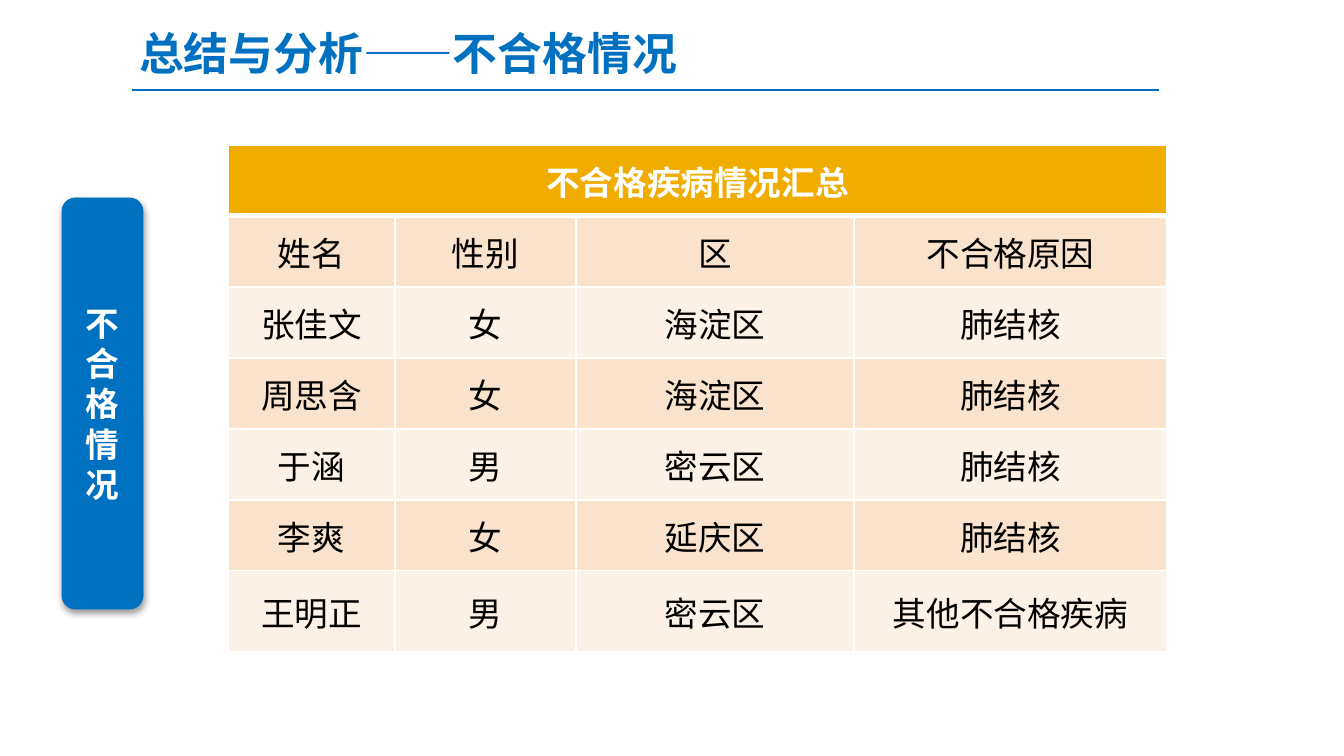
from lxml.etree import SubElement
from pptx import Presentation
from pptx.dml.color import RGBColor
from pptx.enum.shapes import MSO_CONNECTOR, MSO_SHAPE
from pptx.enum.text import MSO_ANCHOR, MSO_AUTO_SIZE, PP_ALIGN
from pptx.oxml import parse_xml
from pptx.oxml.ns import nsdecls, qn
from pptx.util import Pt

PX = 914400 / 134.4
FONT = "Noto Sans CJK SC"
BLUE = RGBColor(0x00, 0x70, 0xC0)
GOLD = RGBColor(0xF0, 0xAD, 0x00)
PEACH = RGBColor(0xF9, 0xE3, 0xCC)
CREAM = RGBColor(0xFC, 0xF1, 0xE7)
WHITE = RGBColor(0xFF, 0xFF, 0xFF)
BLACK = RGBColor(0x00, 0x00, 0x00)


def px(*nums):
    return [round(n * PX) for n in nums]


def write(para, text, size, color, bold):
    run = para.add_run()
    run.text = text
    font = run.font
    font.size, font.bold, font.name = Pt(size), bold, FONT
    font.color.rgb = color
    SubElement(run._r.get_or_add_rPr(), qn("a:ea"), typeface=FONT)


deck = Presentation()
deck.slide_width, deck.slide_height = px(1344, 756)
slide = deck.slides.add_slide(deck.slide_layouts[6])
shapes = slide.shapes

# Rule under the title
rule = shapes.add_connector(MSO_CONNECTOR.STRAIGHT, *px(132, 90, 1159, 90))
rule.line.color.rgb = BLUE
rule.line.width = Pt(1.25)
SubElement(rule._element.spPr, qn("a:effectLst"))

# Title
title = shapes.add_textbox(*px(126, 8, 577, 79))
frame = title.text_frame
frame.word_wrap = False
frame.auto_size = MSO_AUTO_SIZE.SHAPE_TO_FIT_TEXT
para = frame.paragraphs[0]
para.line_spacing = 1.2
write(para, "总结与分析——不合格情况", 24, BLUE, True)

# Side label: narrow enough to wrap after each character
label = shapes.add_shape(MSO_SHAPE.ROUNDED_RECTANGLE, *px(62, 198, 81, 411))
label.fill.solid()
label.fill.fore_color.rgb = BLUE
label.line.color.rgb = BLUE
label.line.width = Pt(0.5)
label.shadow.inherit = False
label._element.spPr.find(qn("a:effectLst")).append(parse_xml(
    f'<a:outerShdw {nsdecls("a")} blurRad="{Pt(3.5)}" dist="{Pt(2)}" '
    'dir="5400000" rotWithShape="0"><a:srgbClr val="000000">'
    '<a:alpha val="38000"/></a:srgbClr></a:outerShdw>'))
frame = label.text_frame
frame.word_wrap = True
frame.vertical_anchor = MSO_ANCHOR.MIDDLE
para = frame.paragraphs[0]
para.alignment = PP_ALIGN.CENTER
write(para, "不合格情况", 18, WHITE, True)

# Table of failed checks
rows = [
    ["不合格疾病情况汇总", "", "", ""],
    ["姓名", "性别", "区", "不合格原因"],
    ["张佳文", "女", "海淀区", "肺结核"],
    ["周思含", "女", "海淀区", "肺结核"],
    ["于涵", "男", "密云区", "肺结核"],
    ["李爽", "女", "延庆区", "肺结核"],
    ["王明正", "男", "密云区", "其他不合格疾病"],
]
table = shapes.add_table(len(rows), 4, *px(228, 145, 939, 507)).table
for col, width in zip(table.columns, px(167, 181, 278, 313)):
    col.width = width
for row, height in zip(table.rows, px(*[71] * 6, 81)):
    row.height = height
table.cell(0, 0).merge(table.cell(0, 3))

for i, texts in enumerate(rows):
    head = i == 0
    shade = GOLD if head else PEACH if i % 2 else CREAM
    for j, text in enumerate(texts):
        cell = table.cell(i, j)
        cell.fill.solid()
        cell.fill.fore_color.rgb = shade
        cell.vertical_anchor = MSO_ANCHOR.MIDDLE
        cell.margin_left, cell.margin_top, cell.margin_right = px(1, 1, 1)
        cell.margin_bottom = 0
        # White borders, thicker on both sides of the header's lower edge
        for k, side in enumerate(("L", "R", "T", "B")):
            thick = (i, side) in ((0, "B"), (1, "T"))
            cell._tc.tcPr.insert(k, parse_xml(
                f'<a:ln{side} {nsdecls("a")} w="{Pt(3 if thick else 1)}">'
                f'<a:solidFill><a:srgbClr val="{WHITE}"/></a:solidFill>'
                f'</a:ln{side}>'))
        if text:
            para = cell.text_frame.paragraphs[0]
            para.alignment = PP_ALIGN.CENTER
            write(para, text, 18, WHITE if head else BLACK, head)

deck.save("out.pptx")
